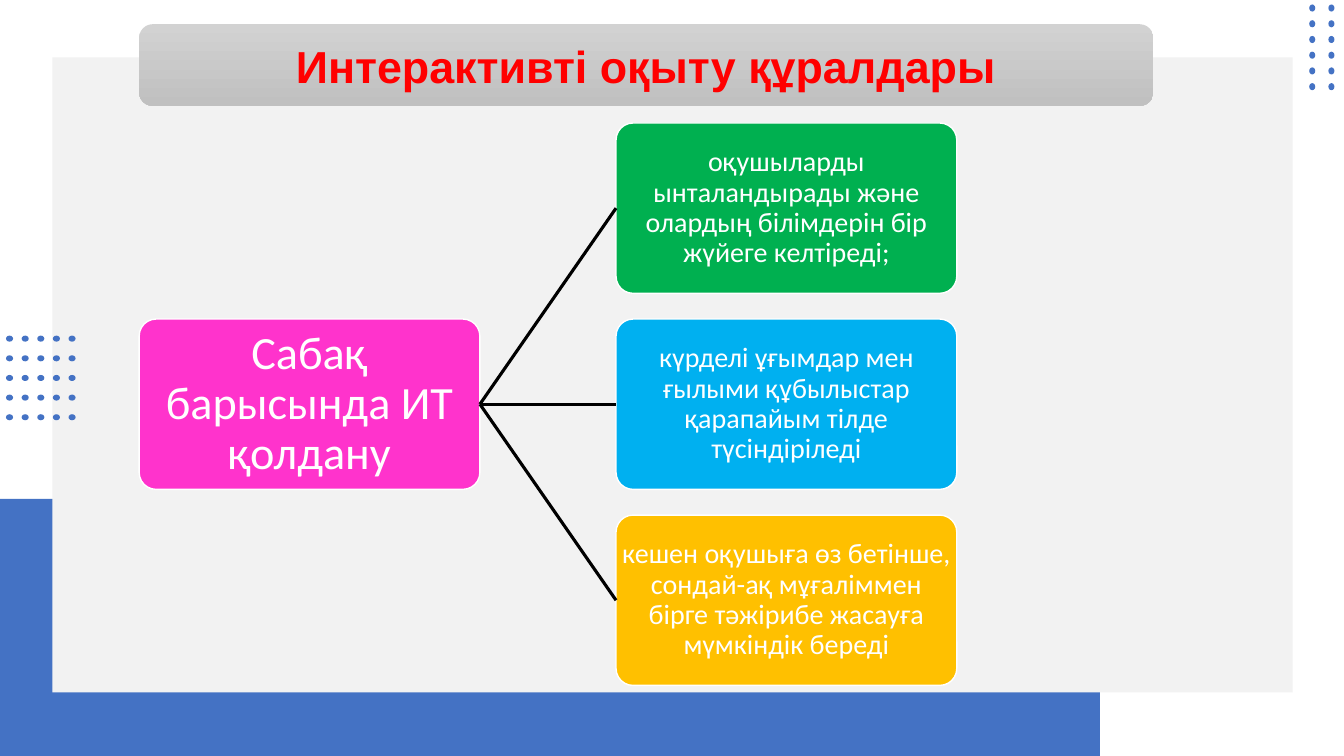
from pptx import Presentation
from pptx.dml.color import RGBColor
from pptx.enum.shapes import MSO_CONNECTOR as Link, MSO_SHAPE as Kind
from pptx.enum.text import MSO_ANCHOR as Anchor, PP_ALIGN as Align
from pptx.oxml.ns import qn
from pptx.util import Inches, Pt
from lxml import etree

BLUE = RGBColor(0x44, 0x72, 0xC4)
PALE = RGBColor(0xF2, 0xF2, 0xF2)
SILVER = RGBColor(0xD2, 0xD2, 0xD2)
GREY = RGBColor(0xC0, 0xC0, 0xC0)
RED = RGBColor(0xFF, 0x00, 0x00)
PINK = RGBColor(0xFF, 0x33, 0xCC)
GREEN = RGBColor(0x00, 0xB0, 0x50)
SKY = RGBColor(0x00, 0xB0, 0xF0)
GOLD = RGBColor(0xFF, 0xC0, 0x00)
WHITE = RGBColor(0xFF, 0xFF, 0xFF)
BLACK = RGBColor(0x00, 0x00, 0x00)

TITLE = "Интерактивті оқыту құралдары"
ROOT = "Сабақ барысында ИТ қолдану"
LEAVES = [
    ("оқушыларды ынталандырады және олардың білімдерін бір жүйеге келтіреді;", GREEN),
    ("күрделі ұғымдар мен ғылыми құбылыстар қарапайым тілде түсіндіріледі", SKY),
    ("кешен оқушыға өз бетінше, сондай-ақ мұғаліммен бірге тәжірибе "
     "жасауға мүмкіндік береді", GOLD),
]
CARD_W, CARD_H = 3.38, 1.69


def add_shape(slide, kind, box, fill=None):
    shape = slide.shapes.add_shape(kind, *map(Inches, box))
    shape.shadow.inherit = False
    shape.line.fill.background()
    if fill is not None:
        shape.fill.solid()
        shape.fill.fore_color.rgb = fill
    return shape


def write(shape, text, inset, look):
    """Centre one paragraph; look holds font attributes, colour under 'rgb'."""
    frame = shape.text_frame
    frame.word_wrap = True
    frame.vertical_anchor = Anchor.MIDDLE
    for side in ("left", "top", "right", "bottom"):
        setattr(frame, f"margin_{side}", Inches(inset))
    para = frame.paragraphs[0]
    para.alignment, para.line_spacing = Align.CENTER, 0.9
    run = para.add_run()
    run.text = text
    for name, value in look.items():
        target = run.font.color if name == "rgb" else run.font
        setattr(target, name, value)


def add_dots(slide, box, cols, rows, turn=0):
    """Spread dots evenly; box spans the first to the last dot's corner."""
    left, top, width, height = box
    for col in range(cols):
        for row in range(rows):
            x = left + width * col / (cols - 1)
            y = top + height * row / (rows - 1)
            dot = add_shape(slide, Kind.OVAL, (x, y, 0.07, 0.06), BLUE)
            dot.rotation = turn


def add_title(slide, box):
    bar = add_shape(slide, Kind.ROUNDED_RECTANGLE, box)
    bar.fill.gradient()
    bar.fill.gradient_angle = 270
    for stop, color in zip(bar.fill.gradient_stops, (SILVER, GREY)):
        stop.color.rgb = color
    write(bar, TITLE, 0, {"size": Pt(32), "name": "Arial", "bold": True, "rgb": RED})
    bar.text_frame.margin_top = Inches(0.08)


def add_card(slide, left, top, text, fill, size, inset):
    card = add_shape(slide, Kind.ROUNDED_RECTANGLE, (left, top, CARD_W, CARD_H), fill)
    card.adjustments[0] = 0.1
    card.line.color.rgb = WHITE
    card.line.width = Pt(1)
    write(card, text, inset, {"size": Pt(size), "name": "Calibri", "rgb": WHITE})
    return card


def join(slide, start, end):
    link = slide.shapes.add_connector(Link.STRAIGHT, 0, 0, 0, 0)
    link.begin_connect(start, 3)
    link.end_connect(end, 1)
    link.line.color.rgb = BLACK
    link.line.width = Pt(2.25)
    etree.SubElement(link._element.spPr, qn("a:effectLst"))


def add_tree(slide, box):
    """Root card at the left middle, leaf cards stacked on the right."""
    left, top, width, height = box
    root = add_card(slide, left, top + (height - CARD_H) / 2, ROOT, PINK, 33, 0.02)
    step = (height - CARD_H) / (len(LEAVES) - 1)
    for row, (text, fill) in enumerate(LEAVES):
        leaf = add_card(slide, left + width - CARD_W, top + row * step,
                        text, fill, 20, 0.01)
        join(slide, root, leaf)


def add_back(slide, width, height):
    add_shape(slide, Kind.RECTANGLE, (0, 4.95, 10.91, height - 4.95), BLUE)
    add_shape(slide, Kind.RECTANGLE, (0.52, 0.57, 12.3, 6.3), PALE)
    add_dots(slide, (width - 0.35, 0.05, 0.19, 0.78), 2, 6, 90)
    add_dots(slide, (0.06, 3.33, 0.62, 0.78), 5, 5)


def main():
    deck = Presentation()
    deck.slide_width, deck.slide_height = Inches(13.33), Inches(7.5)
    slide = deck.slides.add_slide(deck.slide_layouts[6])
    add_back(slide, 13.33, 7.5)
    add_title(slide, (1.38, 0.24, 10.06, 0.81))
    add_tree(slide, (1.38, 1.22, 8.11, 5.58))
    deck.save("out.pptx")


if __name__ == "__main__":
    main()
